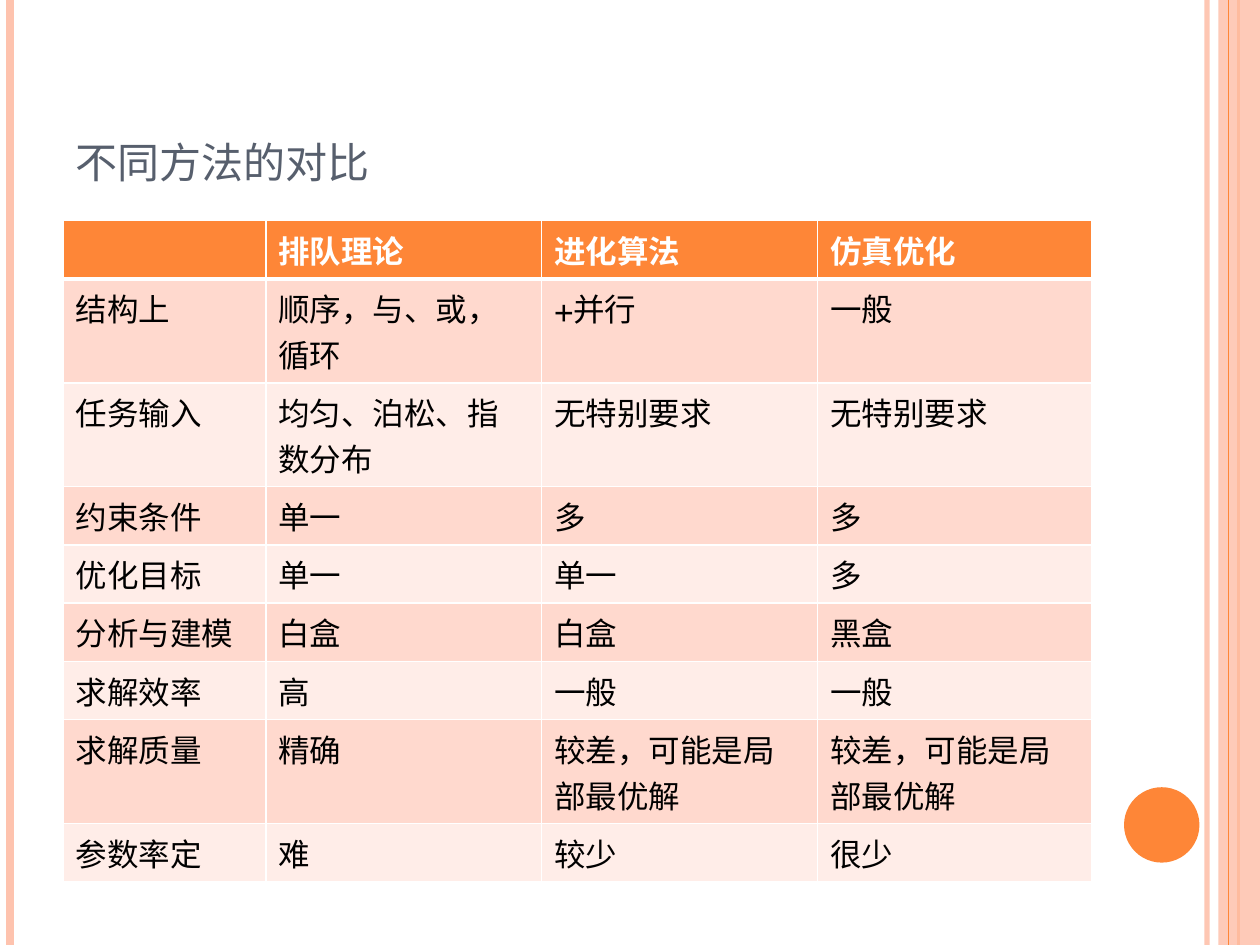
from lxml.etree import SubElement
from pptx import Presentation
from pptx.dml.color import RGBColor
from pptx.enum.shapes import MSO_CONNECTOR, MSO_SHAPE
from pptx.enum.text import MSO_ANCHOR, MSO_AUTO_SIZE, PP_ALIGN
from pptx.oxml.ns import qn
from pptx.util import Cm, Pt

FONT = "TeX Gyre Schola"
COLORS = {
    "accent": "FE8637",
    "pale": "FEC3AE",
    "title": "575F6D",
    "band_dark": "FFD9CE",
    "band_light": "FFEDE8",
    "white": "FFFFFF",
    "black": "000000",
}
COMPARISON = [
    ["", "排队理论", "进化算法", "仿真优化"],
    ["结构上", "顺序，与、或，循环", "+并行", "一般"],
    ["任务输入", "均匀、泊松、指数分布", "无特别要求", "无特别要求"],
    ["约束条件", "单一", "多", "多"],
    ["优化目标", "单一", "单一", "多"],
    ["分析与建模", "白盒", "白盒", "黑盒"],
    ["求解效率", "高", "一般", "一般"],
    ["求解质量", "精确", "较差，可能是局部最优解", "较差，可能是局部最优解"],
    ["参数率定", "难", "较少", "很少"],
]
COLUMN_WIDTHS = [4.09, 5.56, 5.56, 5.54]
ROW_HEIGHT = 1.03
HEADER_TEXT = {"size": Pt(18), "name": FONT, "bold": True}
BODY_TEXT = {**HEADER_TEXT, "bold": False}
TITLE_TEXT = {"size": Pt(30), "name": FONT, "bold": False}


def rgb(color):
    return RGBColor.from_string(COLORS[color])


def set_all(target, values):
    for attribute, value in values.items():
        setattr(target, attribute, value)


def set_font(font, values, color):
    set_all(font, values)
    font.color.rgb = rgb(color)


def set_opacity(properties, percent):
    """Make the solid colour inside a fill or line element partly transparent."""
    color = next(properties.iter(qn("a:srgbClr")))
    SubElement(color, qn("a:alpha"), val=str(percent * 1000))


def add_stripe(slide, x, top, height, color, width, opacity=100):
    stripe = slide.shapes.add_connector(
        MSO_CONNECTOR.STRAIGHT, Cm(x), Cm(top), Cm(x), Cm(top + height))
    stripe.line.color.rgb = rgb(color)
    stripe.line.width = Pt(width)
    properties = stripe._element.spPr
    if opacity < 100:
        set_opacity(properties, opacity)
    SubElement(properties, qn("a:effectLst"))


def add_plain_shape(slide, kind, left, top, width, height, color):
    shape = slide.shapes.add_shape(kind, Cm(left), Cm(top), Cm(width), Cm(height))
    shape.shadow.inherit = False
    shape.fill.solid()
    shape.fill.fore_color.rgb = rgb(color)
    shape.line.fill.background()
    return shape


def add_frame(slide, left, top, width, height):
    """Draw the edge stripes and the disc around the page."""
    right = left + width
    add_stripe(slide, right - 1.07, top, height, "pale", 3, opacity=93)
    add_stripe(slide, left + 0.2, top, height, "pale", 4.5)
    add_stripe(slide, right - 0.43, top, height, "accent", 1.5)
    band = add_plain_shape(slide, MSO_SHAPE.RECTANGLE,
                           right - 0.84, top, 0.84, height, "pale")
    set_opacity(band._element.spPr, 87)
    add_stripe(slide, right - 0.64, top, height, "accent", 0.75)
    add_plain_shape(slide, MSO_SHAPE.OVAL,
                    right - 2.74, top + height - 3.18, 1.52, 1.52, "accent")


def add_title(slide, left, top, width, height):
    title = slide.shapes.title
    set_all(title, {"left": Cm(left), "top": Cm(top),
                    "width": Cm(width), "height": Cm(height)})
    frame = title.text_frame
    set_all(frame, {"text": "不同方法的对比", "word_wrap": True,
                    "auto_size": MSO_AUTO_SIZE.NONE,
                    "vertical_anchor": MSO_ANCHOR.BOTTOM})
    paragraph = frame.paragraphs[0]
    paragraph.alignment = PP_ALIGN.LEFT
    run = paragraph.runs[0]
    set_font(run.font, TITLE_TEXT, "title")
    run.font._element.set("cap", "small")
    # Bring the title in front of the frame.
    title._element.getparent().append(title._element)


def set_borders(cell, bottom_width):
    properties = cell._tc.get_or_add_tcPr()
    widths = {"a:lnL": 1, "a:lnR": 1, "a:lnT": 1, "a:lnB": bottom_width}
    for index, (side, width) in enumerate(widths.items()):
        border = SubElement(properties, qn(side), w=str(Pt(width)))
        fill = SubElement(border, qn("a:solidFill"))
        SubElement(fill, qn("a:srgbClr"), val=COLORS["white"])
        properties.insert(index, border)  # borders come before the cell fill


def add_comparison(slide, left, top):
    table = slide.shapes.add_table(
        len(COMPARISON), len(COLUMN_WIDTHS), Cm(left), Cm(top),
        Cm(sum(COLUMN_WIDTHS)), Cm(ROW_HEIGHT * len(COMPARISON))).table
    for column, width in zip(table.columns, COLUMN_WIDTHS):
        column.width = Cm(width)
    for r, entries in enumerate(COMPARISON):
        table.rows[r].height = Cm(ROW_HEIGHT)
        is_header = r == 0
        band = "accent" if is_header else "band_dark" if r % 2 else "band_light"
        for c, entry in enumerate(entries):
            cell = table.cell(r, c)
            cell.fill.solid()
            cell.fill.fore_color.rgb = rgb(band)
            set_borders(cell, 3 if is_header else 1)
            if entry:
                cell.text = entry
                set_font(cell.text_frame.paragraphs[0].runs[0].font,
                         HEADER_TEXT if is_header else BODY_TEXT,
                         "white" if is_header else "black")


def main():
    deck = Presentation()
    set_all(deck, {"slide_width": Cm(25.4), "slide_height": Cm(19.05)})
    slide = deck.slides.add_slide(deck.slide_layouts.get_by_name("Title Only"))
    add_frame(slide, 0, 0, 25.4, 19.05)
    add_title(slide, 1.27, 0.76, 20.75, 3.18)
    add_comparison(slide, 1.27, 4.45)
    deck.save("out.pptx")


if __name__ == "__main__":
    main()
